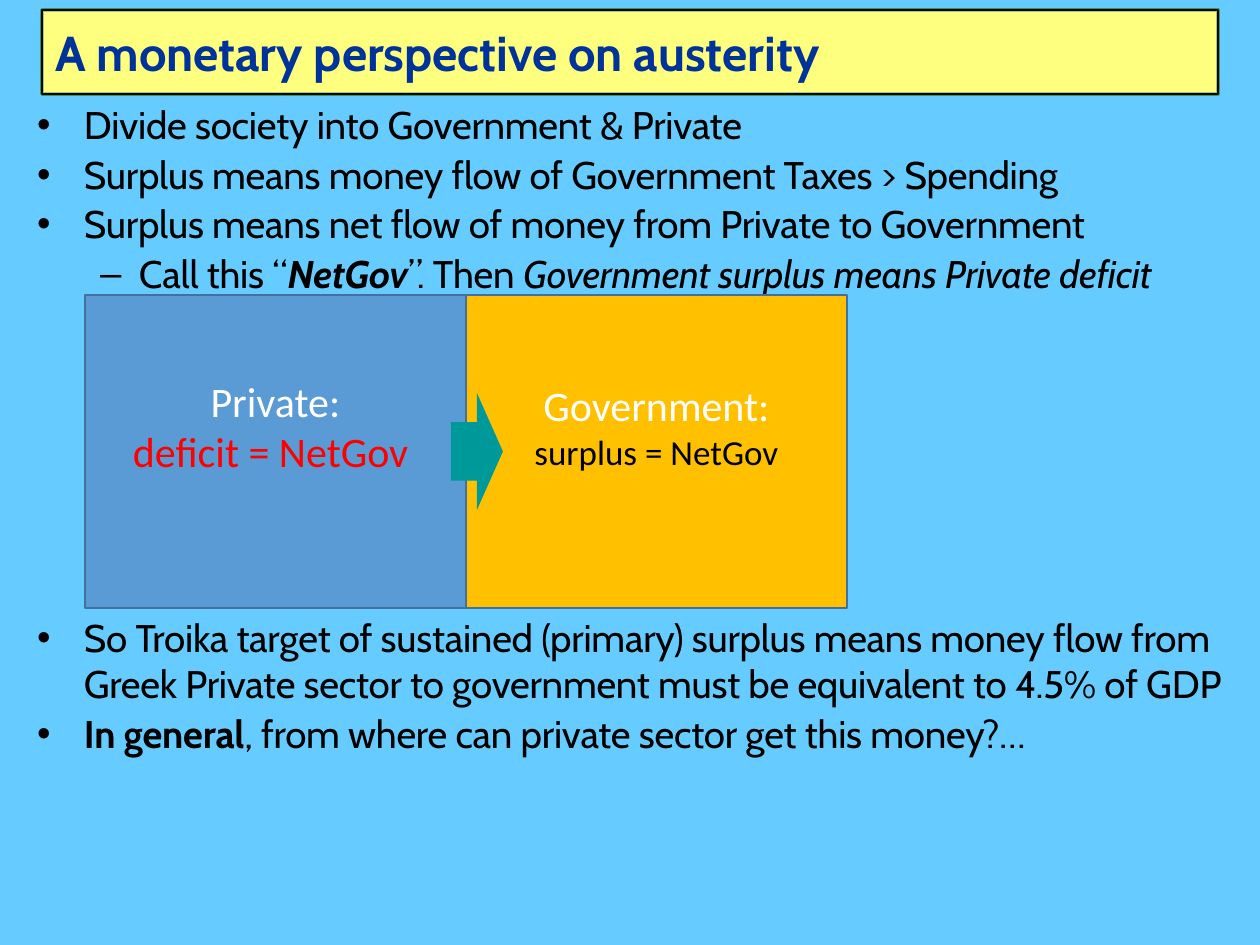
from typing import Any, NamedTuple

from lxml.etree import SubElement as Sub
from pptx import Presentation as Deck
from pptx.dml.color import RGBColor as RGB
from pptx.enum.shapes import MSO_SHAPE as Kind
from pptx.enum.text import MSO_ANCHOR as Anchor, MSO_AUTO_SIZE as Fit, PP_ALIGN as Align
from pptx.oxml.ns import qn
from pptx.util import Pt

PX = 914400 // 126
SKY = RGB(0x66, 0xCC, 0xFF)
LEMON = RGB(0xFF, 0xFF, 0x66)
CREAM = RGB(0xFF, 0xFF, 0x99)
GREEN = RGB(0x33, 0x99, 0x66)
NAVY = RGB(0x00, 0x33, 0x99)
BLACK = RGB(0x00, 0x00, 0x00)
WHITE = RGB(0xFF, 0xFF, 0xFF)
RED = RGB(0xFF, 0x00, 0x00)
BLUE = RGB(0x5B, 0x9B, 0xD5)
STEEL = RGB(0x41, 0x71, 0x9C)
GOLD = RGB(0xFF, 0xC0, 0x00)
TEAL = RGB(0x00, 0x99, 0x99)


class Box(NamedTuple):
    left: int
    top: int
    width: int
    height: int


class Run(NamedTuple):
    text: str
    bold: bool = False
    italic: bool = False


class Item(NamedTuple):
    runs: tuple[Run, ...]
    level: int = 0


class Bullet(NamedTuple):
    mark: str
    left: int
    hang: int


class Line(NamedTuple):
    text: str
    size: int
    color: RGB


class Sector(NamedTuple):
    fill: RGB
    lines: tuple[Line, ...]


BULLETS = (Bullet("•", 47, 47), Bullet("–", 102, 39))
TITLE = Box(42, 10, 1176, 84)
FIRST = Box(32, 95, 1207, 210)
LAST = FIRST._replace(top=608)
CELL = Box(85, 295, 381, 313)
ARROW = Box(451, 393, 52, 117)
EMPTY = 51

INTRO = (
    Item((Run("Divide society into Government & Private"),)),
    Item((Run("Surplus means money flow of Government Taxes > Spending"),)),
    Item((Run("Surplus means net flow of money from Private to Government"),)),
    Item((Run("Call this “"), Run("NetGov", True, True), Run("”. Then "),
          Run("Government surplus means Private deficit", italic=True)), 1),
)
CLOSE = (
    Item((Run("So Troika target of sustained (primary) surplus means money flow from "
              "Greek Private sector to government must be equivalent to 4.5% of GDP"),)),
    Item((Run("In general", True),
          Run(", from where can private sector get this money?…"))),
)
SECTORS = (
    Sector(BLUE, (Line("Private:", 24, WHITE), Line("deficit = NetGov ", 24, RED))),
    Sector(GOLD, (Line("Government:", 24, WHITE), Line("surplus = NetGov", 20, BLACK))),
)


def put(obj: Any, vals: dict[str, Any]) -> None:
    for key, val in vals.items():
        setattr(obj, key, val)


def place(shape: Any, box: Box) -> None:
    put(shape, {key: val * PX for key, val in box._asdict().items()})


def inset(frame: Any, side: int, top: int, base: int, anchor: Anchor) -> None:
    put(frame, {"margin_left": side * PX, "margin_right": side * PX,
                "margin_top": top * PX, "margin_bottom": base * PX,
                "vertical_anchor": anchor, "word_wrap": True, "auto_size": Fit.NONE})


def paint(shape: Any, fill: RGB, edge: RGB | None = None, width: float = 1) -> None:
    shape.fill.solid()
    shape.fill.fore_color.rgb = fill
    if edge is None:
        shape.line.fill.background()
    else:
        shape.line.color.rgb = edge
        shape.line.width = Pt(width)


def draw(slide: Any, kind: Kind, box: Box) -> Any:
    shape = slide.shapes.add_shape(kind, *(val * PX for val in box))
    shape.shadow.inherit = False
    return shape


def write(para: Any, text: str, size: int, face: str, color: RGB,
          bold: bool = False, italic: bool = False) -> Any:
    run = para.add_run()
    run.text = text
    put(run.font, {"size": Pt(size), "name": face, "bold": bold, "italic": italic})
    run.font.color.rgb = color
    return run


def head(slide: Any) -> None:
    plate = draw(slide, Kind.RECTANGLE, TITLE)
    paint(plate, LEMON, GREEN, 2)
    title = slide.shapes.title
    title.element.addprevious(plate.element)
    place(title, TITLE)
    paint(title, CREAM, BLACK)
    tone = title.element.spPr.find(qn("a:solidFill"))[0]
    Sub(tone, qn("a:alpha"), val="50000")
    inset(title.text_frame, 13, 6, 6, Anchor.MIDDLE)
    para = title.text_frame.paragraphs[0]
    para.alignment = Align.LEFT
    write(para, "A monetary perspective on austerity", 28, "Cabin", NAVY, True)


def fill_list(shape: Any, box: Box, items: tuple[Item, ...]) -> None:
    place(shape, box)
    frame = shape.text_frame
    inset(frame, 5, 6, 6, Anchor.TOP)
    for num, item in enumerate(items):
        para = frame.add_paragraph() if num else frame.paragraphs[0]
        put(para, {"level": item.level, "space_before": Pt(2)})
        style = BULLETS[item.level]
        props = para._p.get_or_add_pPr()
        props.set("marL", str(style.left * PX))
        props.set("indent", str(-style.hang * PX))
        Sub(props, qn("a:buFont"), typeface="Arial")
        Sub(props, qn("a:buChar"), char=style.mark)
        for part in item.runs:
            run = write(para, part.text, 22, "Cabin", BLACK, part.bold, part.italic)
            run.font._element.set("spc", "-10")


def sector(slide: Any, box: Box, part: Sector) -> None:
    shape = draw(slide, Kind.RECTANGLE, box)
    paint(shape, part.fill, STEEL, 0.88)
    frame = shape.text_frame
    inset(frame, 13, 6, 6 + EMPTY, Anchor.MIDDLE)
    for num, line in enumerate(part.lines):
        para = frame.add_paragraph() if num else frame.paragraphs[0]
        para.alignment = Align.CENTER
        write(para, line.text, line.size, "Calibri", line.color)


def main() -> None:
    deck = Deck()
    put(deck, {"slide_width": 1260 * PX, "slide_height": 945 * PX})
    slide = deck.slides.add_slide(deck.slide_layouts[3])
    back = slide.background.fill
    back.solid()
    back.fore_color.rgb = SKY
    head(slide)
    fill_list(slide.placeholders[1], FIRST, INTRO)
    fill_list(slide.placeholders[2], LAST, CLOSE)
    for num, part in enumerate(SECTORS):
        sector(slide, CELL._replace(left=CELL.left + num * CELL.width), part)
    paint(draw(slide, Kind.RIGHT_ARROW, ARROW), TEAL)
    deck.save("out.pptx")


if __name__ == "__main__":
    main()
